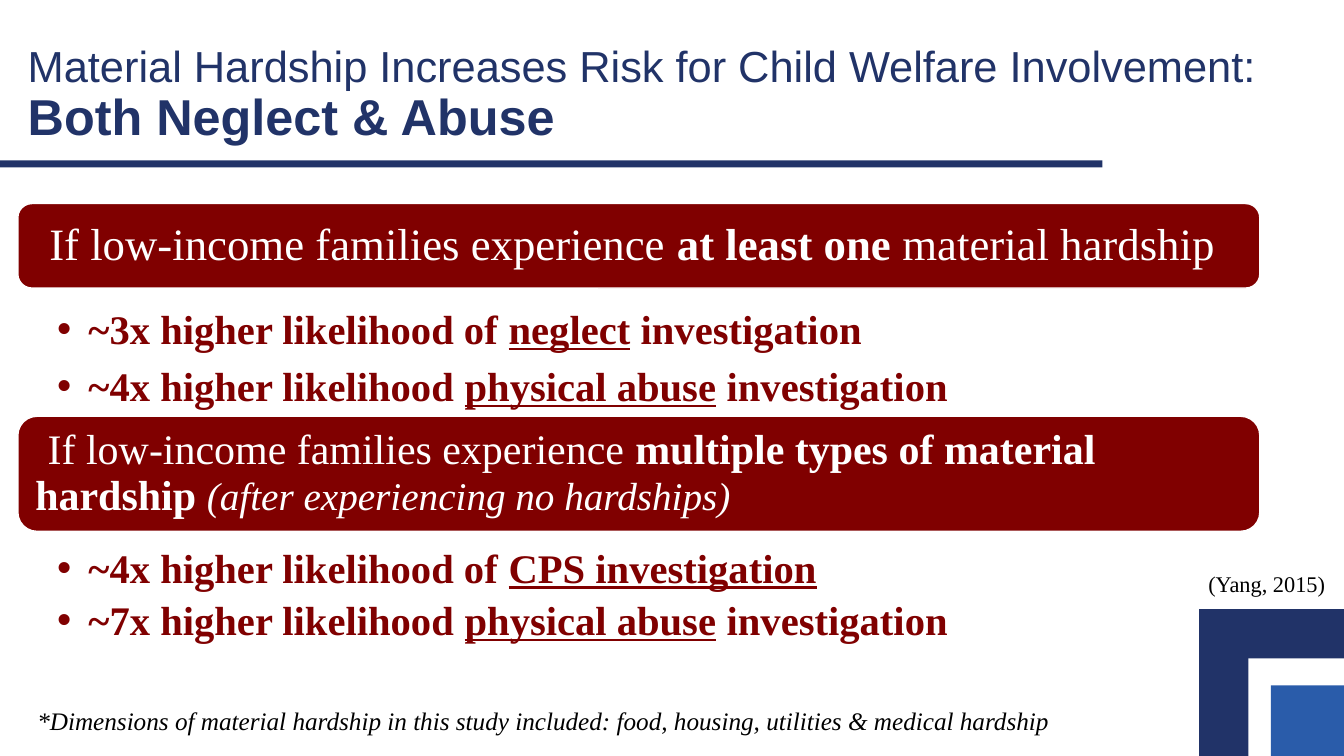
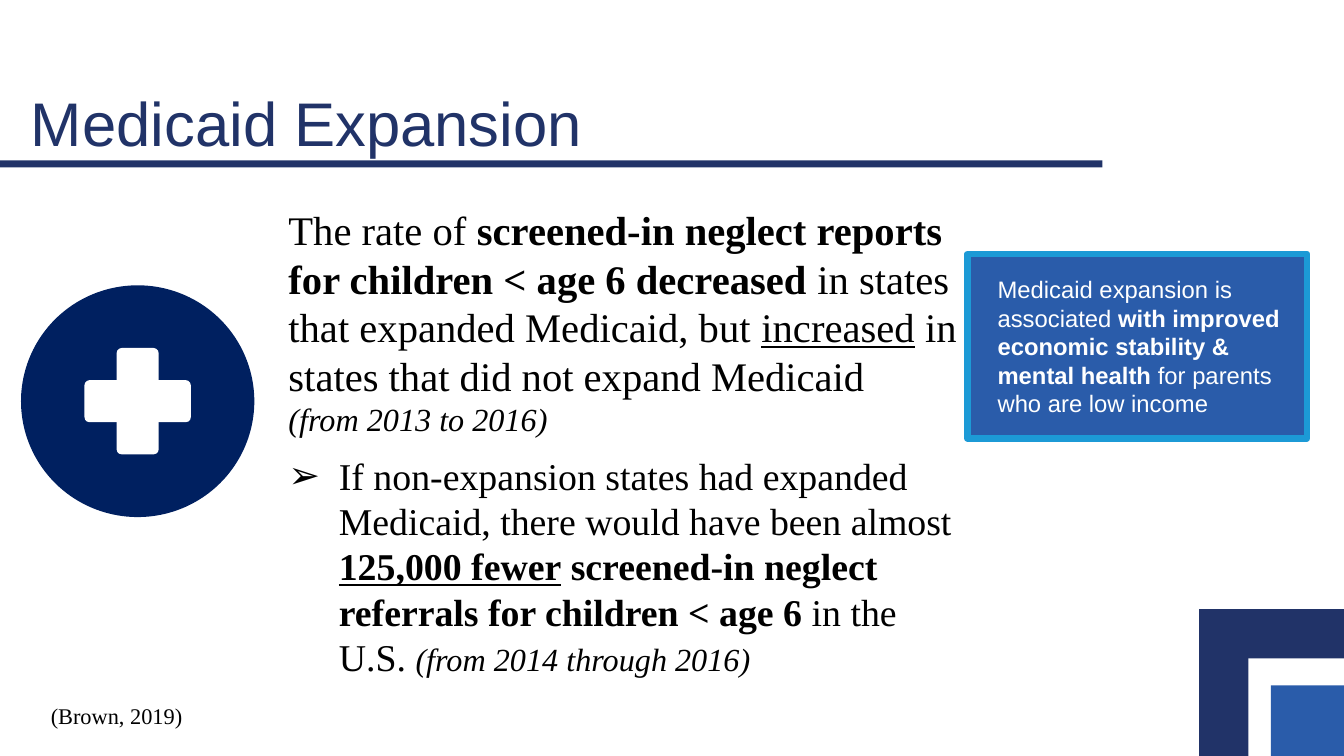
import pptx
import pptx.dml.color
import pptx.enum.shapes
import pptx.enum.text
import pptx.util
from dataclasses import dataclass
from lxml import etree

Cm = pptx.util.Cm
Pt = pptx.util.Pt
Kind = pptx.enum.shapes.MSO_SHAPE
Anchor = pptx.enum.text.MSO_ANCHOR
NS = "http://schemas.openxmlformats.org/drawingml/2006/main"


@dataclass(frozen=True)
class Theme:
    sans: str = "Arial"
    serif: str = "Times New Roman"
    navy: str = "213368"
    blue: str = "2A5CAA"
    sky: str = "1C9AD6"
    badge: str = "002060"
    red: str = "800000"
    white: str = "FFFFFF"
    black: str = "000000"
    head: int = 44
    long: int = 31
    strong: int = 36
    band: int = 32
    tall: int = 30
    aside: int = 28
    body: int = 29
    point: int = 27
    years: int = 23
    note: int = 18
    call: int = 17
    cite: int = 16


T = Theme()


@dataclass
class Para:
    runs: list
    size: int
    mark: str = ""
    left: float = 0
    first: float = 0
    lead: float = 1
    before: int = 0
    after: int = 0


def rgb(code):
    return pptx.dml.color.RGBColor.from_string(code)


def indent(par, item):
    props = par._p.get_or_add_pPr()
    props.set("marL", str(Cm(item.left)))
    props.set("indent", str(Cm(item.first)))
    if item.mark:
        etree.SubElement(props, f"{{{NS}}}buFont", typeface=T.sans)
        etree.SubElement(props, f"{{{NS}}}buChar", char=item.mark)


def write(shape, paras, face, color, pad=(0.25, 0.13, 0.25, 0.13), anchor=Anchor.TOP):
    frame = shape.text_frame
    frame.word_wrap = True
    frame.vertical_anchor = anchor
    frame.margin_left, frame.margin_top, frame.margin_right, frame.margin_bottom = map(Cm, pad)
    for num, item in enumerate(paras):
        par = frame.add_paragraph() if num else frame.paragraphs[0]
        indent(par, item)
        par.alignment = pptx.enum.text.PP_ALIGN.LEFT
        par.line_spacing = item.lead
        par.space_before = Pt(item.before)
        par.space_after = Pt(item.after)
        for text, style, *size in item.runs:
            if "n" in style:
                par.add_line_break()
            run = par.add_run()
            run.text = text
            font = run.font
            font.name = face
            font.size = Pt(size[0] if size else item.size)
            font.color.rgb = rgb(color)
            font.bold = "b" in style
            font.italic = "i" in style
            font.underline = "u" in style


def label(slide, box, paras, face=T.serif, color=T.black, **opts):
    write(slide.shapes.add_textbox(*map(Cm, box)), paras, face, color, **opts)


def block(slide, box, fill, kind=Kind.RECTANGLE, line=None, width=1):
    shape = slide.shapes.add_shape(kind, *map(Cm, box))
    shape.shadow.inherit = False
    shape.fill.solid()
    shape.fill.fore_color.rgb = rgb(fill)
    if line:
        shape.line.color.rgb = rgb(line)
        shape.line.width = Pt(width)
    else:
        shape.line.fill.background()
    return shape


def title(slide, box, paras):
    label(slide, box, paras, T.sans, T.navy, anchor=Anchor.BOTTOM)


def start(deck):
    slide = deck.slides.add_slide(deck.slide_layouts[6])
    block(slide, (0, 4.04, 27.78, 0.18), T.navy)
    block(slide, (30.22, 15.35, 3.65, 1.24), T.navy)
    block(slide, (30.22, 15.35, 1.24, 3.7), T.navy)
    block(slide, (32.03, 17.27, 1.84, 1.78), T.blue)
    return slide


def band(slide, top, high, para):
    shape = block(slide, (0.45, top, 31.3, high), T.red, Kind.ROUNDED_RECTANGLE, T.white)
    write(shape, [para], T.serif, T.white, pad=(0.3, 0, 0.3, 0), anchor=Anchor.MIDDLE)


def points(slide, top, pad, lead, rows):
    paras = [
        Para([(a, "b"), (b, "bu"), (c, "b")], T.body, "•", 0.79, -0.79, lead, after=6)
        for a, b, c in rows
    ]
    label(slide, (0.45, top, 31.3, 2.95), paras, color=T.red, pad=(0.99, pad, 0.3, 0.03))


def badge(slide, x, y):
    long, short = 2.68, 1.06
    block(slide, (x - 2.94, y - 2.92, 5.88, 5.84), T.badge, Kind.OVAL)
    for wide, high in ((long, short), (short, long)):
        box = (x - wide / 2, y - high / 2, wide, high)
        bar = block(slide, box, T.white, Kind.ROUNDED_RECTANGLE)
        bar.adjustments[0] = 0.12


def risk(deck):
    slide = start(deck)
    title(slide, (0.45, 0.74, 32.66, 3.07), [
        Para([
            ("Material Hardship Increases Risk for Child Welfare Involvement:", ""),
            ("Both Neglect & Abuse", "bn", T.strong),
        ], T.long, lead=0.9),
    ])
    label(slide, (30.2, 14.23, 3.66, 0.94), [Para([("(Yang, 2015)", "")], T.cite)])
    band(slide, 5.13, 2.13, Para([
        ("If low-income families experience ", ""),
        ("at least one", "b"),
        (" material hardship", ""),
    ], T.band, first=0.39, lead=0.9))
    points(slide, 7.54, 0.12, 1, [
        ("~3x higher likelihood of ", "neglect", " investigation"),
        ("~4x higher likelihood ", "physical abuse", " investigation"),
    ])
    band(slide, 10.49, 2.9, Para([
        ("If low-income families experience ", ""),
        ("multiple types of material hardship ", "b"),
        ("(after experiencing no hardships)", "i", T.aside),
    ], T.tall, first=0.31, lead=0.9))
    points(slide, 13.41, 0.4, 0.9, [
        ("~4x higher likelihood of ", "CPS investigation", ""),
        ("~7x higher likelihood ", "physical abuse", " investigation"),
    ])
    label(slide, (0.69, 17.65, 27.53, 1.02), [Para([(
        "*Dimensions of material hardship in this study included: "
        "food, housing, utilities & medical hardship", "i")], T.note)])


def growth(deck):
    slide = start(deck)
    title(slide, (0.53, 1.26, 33.3, 2.9), [
        Para([("Medicaid Expansion", "")], T.head, lead=0.9),
    ])
    label(slide, (7.02, 5.03, 17.37, 13.54), [
        Para([
            ("The rate of ", ""),
            ("screened-in neglect reports for children < age 6 decreased", "b"),
            (" in states that expanded Medicaid, but ", ""),
            ("increased", "u"),
            (" in states that did not expand Medicaid", ""),
            ("(from 2013 to 2016)", "in", T.years),
        ], T.body),
        Para([
            ("If non-expansion states had expanded Medicaid, "
             "there would have been almost ", ""),
            ("125,000 fewer", "bu"),
            (" screened-in neglect referrals for children < age 6 ", "b"),
            ("in the U.S. ", ""),
            ("(from 2014 through 2016)", "i", T.years),
        ], T.point, "➢", 1.27, -1.27, before=10),
    ], pad=(0.25, 0.13, 0.1, 0.13))
    badge(slide, 3.47, 10.11)
    label(slide, (1.03, 17.56, 4.5, 1.02), [Para([("(Brown, 2019)", "")], T.cite)])
    call = block(slide, (24.38, 6.4, 8.56, 4.65), T.blue, line=T.sky, width=4.5)
    write(call, [Para([
        ("Medicaid expansion is associated ", ""),
        ("with improved economic stability & mental health", "b"),
        (" for parents who are low income", ""),
    ], T.call)], T.sans, T.white, pad=(0.76, 0.5, 0.25, 0.5), anchor=Anchor.MIDDLE)


def main():
    deck = pptx.Presentation()
    deck.slide_width = Cm(33.87)
    deck.slide_height = Cm(19.05)
    risk(deck)
    growth(deck)
    deck.save("out.pptx")


if __name__ == "__main__":
    main()
